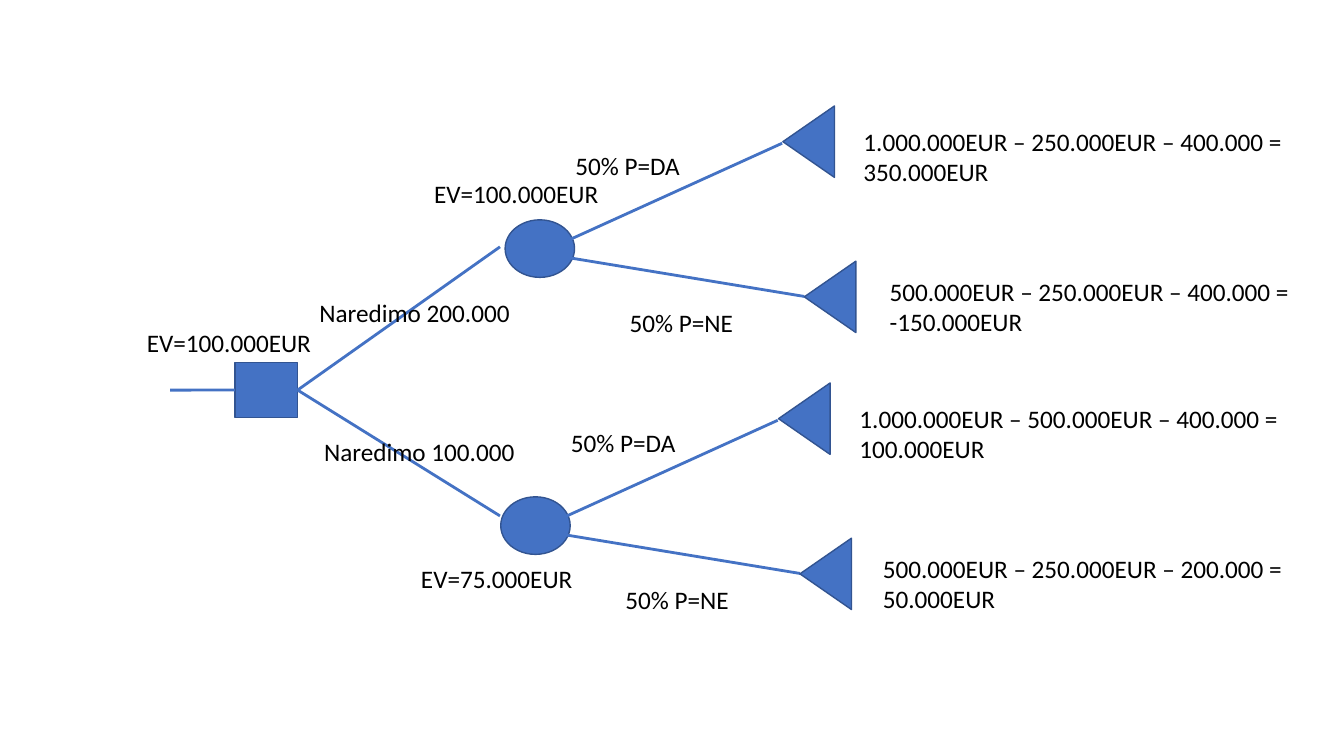
import dataclasses
import typing

import lxml.etree
import pptx
import pptx.dml.color
import pptx.enum.shapes
import pptx.enum.text
import pptx.oxml.ns
import pptx.util

Cm = pptx.util.Cm
SHAPES = pptx.enum.shapes.MSO_SHAPE
COLORS = {"node": "4472C4", "outline": "325491", "text": "000000"}
SECOND_DX, SECOND_DY = -0.11, 6.98


@dataclasses.dataclass
class Outcome:
    payoff: str
    payoff_left: float
    payoff_width: float


@dataclasses.dataclass
class Branch:
    dx: float
    dy: float
    decision: str
    decision_box: tuple[float, float, float]
    end: tuple[float, float]
    value: str
    value_box: tuple[float, float, float]
    success: Outcome
    failure: Outcome


BRANCHES = [
    Branch(0, 0, "Naredimo 200.000", (7.8, 7.37, 5.36), (12.6, 6.22),
           "EV=100.000EUR", (10.69, 4.37, 4.7),
           Outcome("1.000.000EUR – 250.000EUR – 400.000 =\n350.000EUR", 21.51, 11.18),
           Outcome("500.000EUR – 250.000EUR – 400.000 =\n-150.000EUR", 22.17, 10.67)),
    Branch(SECOND_DX, SECOND_DY, "Naredimo 100.000", (7.92, 10.87, 5.54), (12.6, 13),
           "EV=75.000EUR", (10.36, 14.07, 4.37),
           Outcome("1.000.000EUR – 500.000EUR – 400.000 =\n100.000EUR", 21.41, 11.18),
           Outcome("500.000EUR – 250.000EUR – 200.000 =\n50.000EUR", 22, 10.67)),
]


def rgb(name: str) -> pptx.dml.color.RGBColor:
    return pptx.dml.color.RGBColor.from_string(COLORS[name])


def add_text(s: typing.Any, text: str, left: float, top: float, width: float, *,
             height: float = 1.02, size: float = 18, font: str = "Calibri",
             color: str = "text") -> None:
    sp = s.shapes.add_textbox(Cm(left), Cm(top), Cm(width), Cm(height))
    tf = sp.text_frame
    tf.word_wrap = False
    tf.auto_size = pptx.enum.text.MSO_AUTO_SIZE.SHAPE_TO_FIT_TEXT
    p = tf.paragraphs[0]
    for i, line in enumerate(text.split("\n")):
        if i:
            p.add_line_break()
        r = p.add_run()
        r.text = line
        r.font.size = pptx.util.Pt(size)
        r.font.name = font
        r.font.color.rgb = rgb(color)


def add_node(s: typing.Any, kind: typing.Any, left: float, top: float,
             width: float, height: float, rotation: float = 0) -> typing.Any:
    sp = s.shapes.add_shape(kind, Cm(left), Cm(top), Cm(width), Cm(height))
    sp.rotation = rotation
    sp.shadow.inherit = False
    sp.fill.solid()
    sp.fill.fore_color.rgb = rgb("node")
    sp.line.color.rgb = rgb("outline")
    sp.line.width = pptx.util.Pt(1)
    return sp


def add_line(s: typing.Any, x1: float, y1: float, x2: float, y2: float) -> typing.Any:
    line = s.shapes.add_connector(pptx.enum.shapes.MSO_CONNECTOR.STRAIGHT,
                                  Cm(x1), Cm(y1), Cm(x2), Cm(y2))
    line.line.color.rgb = rgb("node")
    line.line.width = pptx.util.Pt(2)
    lxml.etree.SubElement(line._element.spPr, pptx.oxml.ns.qn("a:effectLst"))
    return line


def add_branch(s: typing.Any, root: typing.Any, b: Branch) -> None:
    dx, dy = b.dx, b.dy
    add_line(s, 7.5, 9.83, *b.end).begin_connect(root, 3)
    add_node(s, SHAPES.OVAL, 12.73 + dx, 5.54 + dy, 1.75, 1.45)
    add_text(s, b.decision, *b.decision_box)
    add_text(s, b.value, *b.value_box)
    add_line(s, 13.89 + dx, 6.25 + dy, 19.71 + dx, 3.61 + dy)
    add_line(s, 14.07 + dx, 6.45 + dy, 20.27 + dx, 7.47 + dy)
    add_text(s, "50% P=DA", 14.25 + dx, 3.66 + dy, 3.18)
    add_text(s, "50% P=NE", 15.62 + dx, 7.62 + dy, 3.15)
    for outcome, left, top, payoff_top in ((b.success, 19.48, 2.92, 3.05),
                                           (b.failure, 20.02, 6.83, 6.83)):
        add_node(s, SHAPES.ISOSCELES_TRIANGLE, left + dx, top + dy, 1.8, 1.3, 270)
        add_text(s, outcome.payoff, outcome.payoff_left, payoff_top + dy,
                 outcome.payoff_width, height=1.8)


def main() -> None:
    prs = pptx.Presentation()
    prs.slide_width, prs.slide_height = Cm(33.87), Cm(19.05)
    s = prs.slides.add_slide(prs.slide_layouts[6])
    root = add_node(s, SHAPES.RECTANGLE, 5.92, 9.14, 1.58, 1.38)
    add_line(s, 4.29, 9.83, 5.92, 9.83).end_connect(root, 1)
    add_text(s, "EV=100.000EUR", 3.45, 8.13, 4.7)
    for branch in BRANCHES:
        add_branch(s, root, branch)
    prs.save("out.pptx")


if __name__ == "__main__":
    main()
